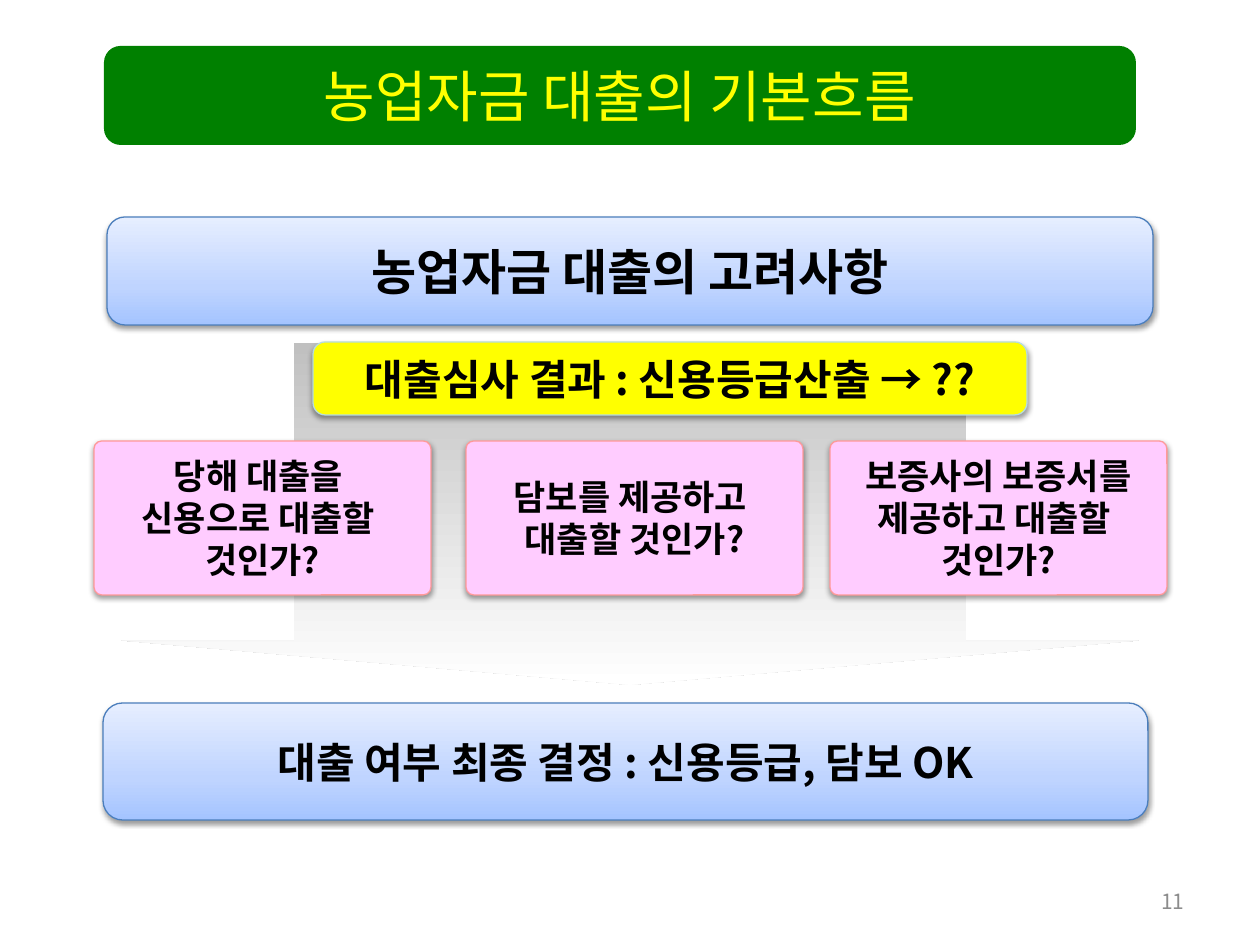
from lxml import etree
from pptx import Presentation
from pptx.dml.color import RGBColor
from pptx.enum.shapes import MSO_SHAPE
from pptx.enum.text import MSO_ANCHOR, PP_ALIGN
from pptx.oxml import parse_xml
from pptx.oxml.ns import nsdecls, qn
from pptx.util import Emu, Pt

PX = 914400 // 126
FONT = "Noto Sans CJK KR"

BLACK = RGBColor(0x00, 0x00, 0x00)
GREEN = RGBColor(0x00, 0x80, 0x00)
YELLOW = RGBColor(0xFF, 0xFF, 0x00)
PINK = RGBColor(0xFF, 0xCC, 0xFF)
PINK_LINE = RGBColor(0xFF, 0x99, 0x99)
BLUE_LINE = RGBColor(0x4B, 0x7E, 0xBC)
PALE_LINE = RGBColor(0xB6, 0xDC, 0xDF)
GRAY = RGBColor(0x8C, 0x8C, 0x8C)

# Gradients run from top to bottom: (percent, colour)
BLUE_FADE = [(0, RGBColor(0xE6, 0xEE, 0xFF)), (65, RGBColor(0xBF, 0xD4, 0xFF)),
             (100, RGBColor(0xA4, 0xC4, 0xFF))]
GRAY_FADE = [(0, RGBColor(0xC0, 0xC0, 0xC0)), (100, RGBColor(0xFF, 0xFF, 0xFF))]

# Content: text, (left, top, width, height) in px, size in points
TITLE = ("농업자금 대출의 기본흐름", (104, 46, 1032, 99), 32)
STAGES = [
    ("농업자금 대출의 고려사항", (107, 217, 1046, 108), 28),
    ("대출 여부 최종 결정 : 신용등급, 담보 OK", (103, 703, 1045, 117), 24),
]
REVIEW = ("대출심사 결과 : 신용등급산출 → ??", (313, 342, 714, 73), 24)
# \v is a line break inside a paragraph
QUESTIONS = [
    (94, "당해 대출을 \n신용으로 대출할 \v것인가?"),
    (466, "담보를 제공하고 \v대출할 것인가?"),
    (830, "보증사의 보증서를 제공하고 대출할 \v것인가?"),
]
QUESTION_TOP, QUESTION_WIDTH, QUESTION_HEIGHT = 441, 337, 154
ARROW = (121, 343, 1018, 342)
PAGE_NUMBER = ("11", (903, 876, 294, 50), 12)


def place(area):
    return [Emu(value * PX) for value in area]


def write(shape, text, size, color, bold=False, align=PP_ALIGN.CENTER, wrap=True):
    frame = shape.text_frame
    frame.text = text
    frame.word_wrap = wrap
    frame.vertical_anchor = MSO_ANCHOR.MIDDLE
    for paragraph in frame.paragraphs:
        paragraph.alignment = align
        for span in paragraph.runs:
            span.font.size = Pt(size)
            span.font.bold = bold
            span.font.name = FONT
            span.font.color.rgb = color
            east_asian = etree.SubElement(span.font._element, qn("a:ea"))
            east_asian.set("typeface", FONT)


def fade(shape, stops):
    marks = "".join(f'<a:gs pos="{percent * 1000}"><a:srgbClr val="{color}"/></a:gs>'
                    for percent, color in stops)
    gradient = parse_xml(f'<a:gradFill {nsdecls("a")} rotWithShape="1"><a:gsLst>{marks}'
                         '</a:gsLst><a:lin ang="5400000" scaled="0"/></a:gradFill>')
    shape._element.spPr.find(qn("a:prstGeom")).addnext(gradient)


def add_shadow(shape):
    effects = shape._element.spPr.find(qn("a:effectLst"))
    effects.append(parse_xml(
        f'<a:outerShdw {nsdecls("a")} blurRad="40000" dist="20000" dir="5400000" '
        'rotWithShape="0"><a:srgbClr val="000000"><a:alpha val="38000"/></a:srgbClr>'
        '</a:outerShdw>'))


def add_panel(page, area, fill, line=None, kind=MSO_SHAPE.ROUNDED_RECTANGLE):
    shape = page.shapes.add_shape(kind, *place(area))
    shape.shadow.inherit = False
    if isinstance(fill, list):
        fade(shape, fill)
    else:
        shape.fill.solid()
        shape.fill.fore_color.rgb = fill
    if line is None:
        shape.line.fill.background()
    else:
        shape.line.color.rgb = line
        shape.line.width = Pt(0.75)
        add_shadow(shape)
    return shape


def main():
    deck = Presentation()
    deck.slide_width, deck.slide_height = place((1260, 945))
    page = deck.slides.add_slide(deck.slide_layouts[6])

    # Title bar
    text, area, size = TITLE
    write(add_panel(page, area, GREEN), text, size, YELLOW, wrap=False)

    # Wide arrow behind the steps
    arrow = add_panel(page, ARROW, GRAY_FADE, kind=MSO_SHAPE.DOWN_ARROW)
    arrow.adjustments[0] = 0.66
    arrow.adjustments[1] = 0.13

    # First and last stage
    for text, area, size in STAGES:
        write(add_panel(page, area, BLUE_FADE, BLUE_LINE), text, size, BLACK, bold=True)

    # Three questions
    for left, text in QUESTIONS:
        area = (left, QUESTION_TOP, QUESTION_WIDTH, QUESTION_HEIGHT)
        question = add_panel(page, area, PINK, PINK_LINE)
        question.adjustments[0] = 0.05
        write(question, text, 20, BLACK, bold=True)

    # Review result
    text, area, size = REVIEW
    write(add_panel(page, area, YELLOW, PALE_LINE), text, size, BLACK, bold=True, wrap=False)

    # Page number
    text, area, size = PAGE_NUMBER
    write(page.shapes.add_textbox(*place(area)), text, size, GRAY, align=PP_ALIGN.RIGHT)

    deck.save("out.pptx")


if __name__ == "__main__":
    main()
